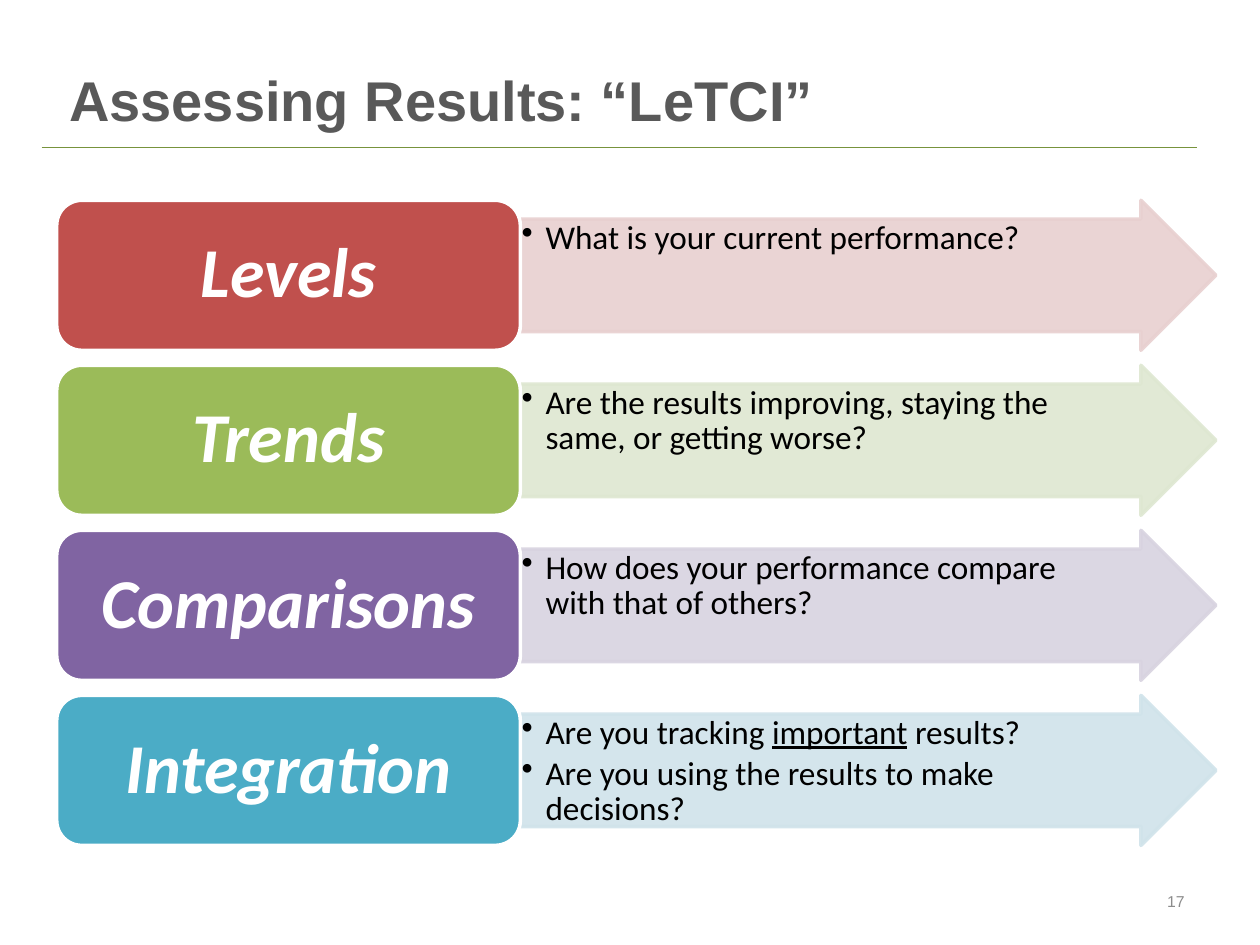
import pptx
import pptx.dml.color
import pptx.enum.shapes
import pptx.enum.text
import pptx.oxml
import pptx.oxml.ns
import pptx.util

WIDTH, HEIGHT = 10, 7.5
SHAPES = pptx.enum.shapes.MSO_SHAPE
ALIGN = pptx.enum.text.PP_ALIGN
ANCHOR = pptx.enum.text.MSO_ANCHOR
TITLE = {"name": "Arial", "size": 32, "bold": True, "color": "595959"}
NUMBER = {"name": "Arial", "size": 9, "color": "8C8C8C"}
LABEL = {"name": "Calibri", "size": 40, "bold": True, "italic": True, "color": "FFFFFF"}
QUESTION = {"name": "Calibri", "size": 19, "color": "000000"}
CRITERIA = [
    ("Levels", "C0504D", "E8D0D0", [["What is your current performance?"]]),
    ("Trends", "9BBB59", "DEE7D1",
     [["Are the results improving, staying the same, or getting worse?"]]),
    ("Comparisons", "8064A2", "D8D3E0",
     [["How does your performance compare with that of others?"]]),
    ("Integration", "4BACC6", "D0E3EA",
     [["Are you tracking ", "important", " results?"],
      ["Are you using the results to make decisions?"]]),
]


def rgb(value):
    """Turn a hex string into a colour."""
    return pptx.dml.color.RGBColor.from_string(value)


def inches(box):
    """Turn the numbers of a box into lengths."""
    return [pptx.util.Inches(value) for value in box]


def set_font(font, values):
    """Set font attributes from a dict of format values."""
    for name, value in values.items():
        if name == "color":
            font.color.rgb = rgb(value)
        else:
            setattr(font, name, pptx.util.Pt(value) if name == "size" else value)


def set_frame(frame, anchor, insets):
    """Set wrapping, anchor and the left, top, right and bottom insets."""
    values = {"word_wrap": True, "vertical_anchor": anchor}
    sides = ("left", "top", "right", "bottom")
    values.update({f"margin_{side}": length for side, length in zip(sides, inches(insets))})
    for name, value in values.items():
        setattr(frame, name, value)


def set_paragraph(paragraph, runs, font, **layout):
    """Fill a paragraph; every second run is underlined."""
    for name, value in layout.items():
        setattr(paragraph, name, value)
    for index, text in enumerate(runs):
        run = paragraph.add_run()
        run.text = text
        set_font(run.font, font)
        if index % 2:
            run.font.underline = True


def add_bullet(paragraph, indent):
    """Give a paragraph a hanging bullet."""
    properties = paragraph._p.get_or_add_pPr()
    properties.set("marL", str(pptx.util.Inches(indent)))
    properties.set("indent", str(-pptx.util.Inches(indent)))
    bullet = pptx.oxml.parse_xml(f'<a:buChar {pptx.oxml.ns.nsdecls("a")} char="•"/>')
    properties.append(bullet)


def add_text(slide, box, text, font, anchor, alignment):
    """Add a one-paragraph text box."""
    frame = slide.shapes.add_textbox(*inches(box)).text_frame
    set_frame(frame, anchor, (0.1, 0.05, 0.1, 0.05))
    set_paragraph(frame.paragraphs[0], [text], font, alignment=alignment)


def add_block(slide, kind, box, fill, line):
    """Add a filled and outlined shape."""
    shape = slide.shapes.add_shape(kind, *inches(box))
    shape.shadow.inherit = False
    shape.fill.solid()
    shape.fill.fore_color.rgb = rgb(fill)
    shape.line.color.rgb = rgb(line)
    shape.line.width = pptx.util.Pt(2)
    return shape


def set_alpha(shape, percent):
    """Make the fill and line colours of a shape partly transparent."""
    for color in shape._element.spPr.iter(pptx.oxml.ns.qn("a:srgbClr")):
        color.append(pptx.oxml.parse_xml(
            f'<a:alpha {pptx.oxml.ns.nsdecls("a")} val="{percent * 1000}"/>'))


def add_arrow(slide, box, color, questions):
    """Add a pale arrow holding bulleted questions."""
    arrow = add_block(slide, SHAPES.RIGHT_ARROW, box, color, color)
    arrow.adjustments[0], arrow.adjustments[1] = 0.75, 0.5
    set_alpha(arrow, 90)
    frame = arrow.text_frame
    set_frame(frame, ANCHOR.TOP, (0.01, 0.01, 0.31, 0.01))
    for index, runs in enumerate(questions):
        paragraph = frame.add_paragraph() if index else frame.paragraphs[0]
        set_paragraph(paragraph, runs, QUESTION, alignment=ALIGN.LEFT,
                      line_spacing=0.9, space_after=pptx.util.Pt(2.85))
        add_bullet(paragraph, 0.19)


def add_criterion(slide, box, criterion):
    """Add one row: a label block followed by its arrow."""
    left, top, width, height = box
    label, strong, pale, questions = criterion
    split = width * 0.4
    add_arrow(slide, (left + split, top, width - split, height), pale, questions)
    block = add_block(slide, SHAPES.ROUNDED_RECTANGLE, (left, top, split, height),
                      strong, "FFFFFF")
    set_frame(block.text_frame, ANCHOR.MIDDLE, (0.17, 0.08, 0.17, 0.08))
    set_paragraph(block.text_frame.paragraphs[0], [label], LABEL,
                  alignment=ALIGN.CENTER, line_spacing=0.9)


def add_criteria(slide, box):
    """Stack the criteria with gaps a tenth of a row high."""
    left, top, width, height = box
    row = height / (len(CRITERIA) * 1.1 - 0.1)
    for index, criterion in enumerate(CRITERIA):
        add_criterion(slide, (left, top + index * row * 1.1, width, row), criterion)


def add_header(slide, box):
    """Add the title and the rule below it."""
    left, top, width, height = box
    add_text(slide, (left + 0.12, top, width - 0.23, height - 0.07),
             "Assessing Results: “LeTCI”", TITLE, ANCHOR.BOTTOM, ALIGN.LEFT)
    bottom = top + height
    rule = slide.shapes.add_connector(pptx.enum.shapes.MSO_CONNECTOR.STRAIGHT,
                                      *inches((left, bottom, left + width, bottom)))
    rule.line.color.rgb = rgb("77933C")
    rule.line.width = pptx.util.Pt(0.75)
    rule._element.spPr.append(
        pptx.oxml.parse_xml(f'<a:effectLst {pptx.oxml.ns.nsdecls("a")}/>'))


def main():
    """Build and save the slide."""
    presentation = pptx.Presentation()
    presentation.slide_width, presentation.slide_height = inches((WIDTH, HEIGHT))
    slide = presentation.slides.add_slide(presentation.slide_layouts[6])
    add_header(slide, (0.33, 0.27, 9.17, 0.9))
    add_criteria(slide, (0.45, 1.59, 9.2, 5.12))
    add_text(slide, (7.17, 6.95, 2.33, 0.4), "17", NUMBER, ANCHOR.MIDDLE, ALIGN.RIGHT)
    presentation.save("out.pptx")


if __name__ == "__main__":
    main()
